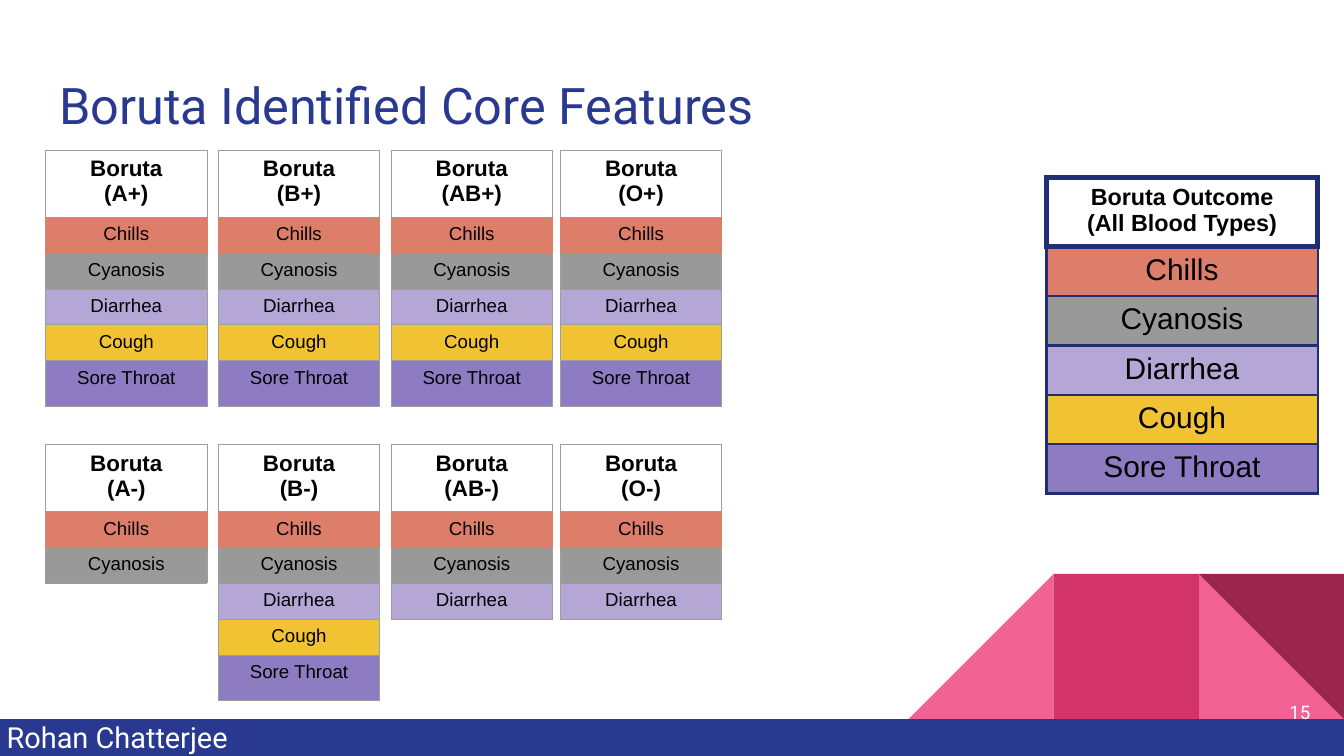
"""Build the slide of core features that Boruta identified for each blood type."""
from dataclasses import dataclass

from lxml import etree
from pptx import Presentation
from pptx import util as u
from pptx.dml.color import RGBColor
from pptx.enum import shapes, text
from pptx.oxml.ns import qn


@dataclass(frozen=True)
class Theme:
    heading: str = "Roboto"
    body: str = "Arial"
    title_size: int = 54
    author_size: int = 31
    outcome_size: int = 32
    outcome_head_size: int = 25
    head_size: int = 24
    small_size: int = 20
    blue: str = "2A3990"
    navy: str = "212D74"
    grey: str = "9E9E9E"
    pink: str = "F06292"
    rose: str = "D23369"
    wine: str = "9C254D"
    white: str = "FFFFFF"
    black: str = "000000"
    chills: str = "DD7E6B"
    cyanosis: str = "999999"
    diarrhea: str = "B4A7D6"
    cough: str = "F1C232"
    throat: str = "8E7CC3"


THEME = Theme()
FEATURES = [
    ("Chills", THEME.chills),
    ("Cyanosis", THEME.cyanosis),
    ("Diarrhea", THEME.diarrhea),
    ("Cough", THEME.cough),
    ("Sore Throat", THEME.throat),
]
BLOOD_TYPES = [
    (2.23, [("A+", 5), ("B+", 5), ("AB+", 5), ("O+", 5)]),
    (6.61, [("A-", 2), ("B-", 5), ("AB-", 3), ("O-", 3)]),
]
TABLE_LEFTS = [0.68, 3.25, 5.82, 8.34]
COLUMNS, ROWS = 20, 11.25


def write(frame, lines, *, size, font, color, bold=False, align=text.PP_ALIGN.LEFT, shift=0):
    """Fill a text frame with lines, shifting the first one sideways."""
    for index, line in enumerate(lines):
        para = frame.paragraphs[0] if index == 0 else frame.add_paragraph()
        para.alignment = align
        if shift and index == 0:
            properties = para._p.get_or_add_pPr()
            properties.set("marL", "0")
            properties.set("indent", str(u.Inches(shift)))
        span = para.add_run()
        span.text = line
        span.font.size = u.Pt(size)
        span.font.name = font
        span.font.bold = bold
        span.font.color.rgb = RGBColor.from_string(color)


def outline(cell, **sides):
    """Draw the cell borders L, R, T and B, each given as (color, points)."""
    properties = cell._tc.get_or_add_tcPr()
    for side in "LRTB":
        color, width = sides[side]
        line = etree.SubElement(properties, qn(f"a:ln{side}"), w=str(u.Pt(width)))
        fill = etree.SubElement(line, qn("a:solidFill"))
        etree.SubElement(fill, qn("a:srgbClr"), val=color)


class Canvas:
    """Hold the theme and current slide, and place elements on its grid."""

    def __init__(self, deck, theme):
        self.theme = theme
        self.page = deck.slides.add_slide(deck.slide_layouts[6])
        self.column = deck.slide_width / COLUMNS
        self.row = deck.slide_height / ROWS

    def place(self, left, top, width, height):
        """Turn grid columns and rows into slide lengths."""
        return (round(left * self.column), round(top * self.row),
                round(width * self.column), round(height * self.row))

    def block(self, kind, area, color, rotation=0, flip=False):
        """Add a plain filled shape."""
        shape = self.page.shapes.add_shape(kind, *self.place(*area))
        shape.shadow.inherit = False
        shape.fill.solid()
        shape.fill.fore_color.rgb = RGBColor.from_string(color)
        shape.line.fill.background()
        shape.rotation = rotation
        if flip:
            shape._element.spPr.find(qn("a:xfrm")).set("flipH", "1")

    def label(self, line, area, inset, anchor=text.MSO_ANCHOR.TOP, **style):
        """Add a text box with one line."""
        box = self.page.shapes.add_textbox(*self.place(*area))
        frame = box.text_frame
        frame.word_wrap = True
        frame.vertical_anchor = anchor
        frame.margin_left = frame.margin_right = u.Inches(inset)
        frame.margin_top = frame.margin_bottom = u.Inches(inset)
        write(frame, [line], font=self.theme.heading, **style)

    def features(self, head, count, left, top, width, heights, sizes, borders, shift=0):
        """Add a one-column table: a header over the first features."""
        area = self.place(left, top, width, sum(heights))
        table = self.page.shapes.add_table(count + 1, 1, *area).table
        table.first_row = table.horz_banding = False
        rows = [(head, None)] + [([name], color) for name, color in FEATURES[:count]]
        for index, (lines, color) in enumerate(rows):
            table.rows[index].height = round(heights[index] * self.row)
            cell = table.cell(index, 0)
            cell.margin_left = cell.margin_right = u.Inches(0.1)
            cell.margin_top = cell.margin_bottom = u.Inches(0.1)
            outline(cell, **borders(index))
            if color:
                cell.fill.solid()
                cell.fill.fore_color.rgb = RGBColor.from_string(color)
            else:
                cell.fill.background()
            write(cell.text_frame, lines, size=sizes[min(index, 1)], font=self.theme.body,
                  color=self.theme.black, bold=index == 0, align=text.PP_ALIGN.CENTER,
                  shift=0 if index else shift)


def small_borders(index):
    """Give grey borders, with the sides of the Chills row in its own colour."""
    grey, chills = (THEME.grey, 0.75), (THEME.chills, 0.75)
    side = chills if index == 1 else grey
    return dict(L=side, R=side, T=chills if index == 2 else grey, B=side)


def outcome_borders(index):
    """Give navy borders, thick around the header."""
    thin, thick = (THEME.navy, 3), (THEME.navy, 6)
    side = thin if index else thick
    return dict(L=side, R=side, T=thick if index < 2 else thin, B=side)


def main():
    """Build and save the deck."""
    deck = Presentation()
    deck.slide_width, deck.slide_height = u.Inches(20), u.Inches(11.25)
    canvas = Canvas(deck, THEME)

    side, top = 2.16, 8.54
    left, middle, right = (COLUMNS - side * count for count in (3, 2, 1))
    triangle, rectangle = shapes.MSO_SHAPE.RIGHT_TRIANGLE, shapes.MSO_SHAPE.RECTANGLE
    canvas.block(triangle, (right, top, side, side), THEME.pink)
    canvas.block(triangle, (left, top, side, side), THEME.pink, flip=True)
    canvas.block(rectangle, (middle, top, side, side), THEME.rose)
    canvas.block(triangle, (right, top, side, side), THEME.wine, rotation=180)
    canvas.block(rectangle, (0, top + side, COLUMNS, ROWS - top - side), THEME.blue)

    canvas.label("Boruta Identified Core Features", (0.68, 0.9, 18.64, 1.33), 0.2,
                 size=THEME.title_size, color=THEME.blue)
    canvas.label("15", (18.5, 10.17, 1.2, 0.86), 0.2, text.MSO_ANCHOR.MIDDLE,
                 size=THEME.small_size, color=THEME.white, align=text.PP_ALIGN.RIGHT)

    canvas.features(["Boruta Outcome", "(All Blood Types)"], 5, 15.57, 2.64, 4.04,
                    [0.87] + [0.73] * 5, (THEME.outcome_head_size, THEME.outcome_size),
                    outcome_borders)
    for table_top, groups in BLOOD_TYPES:
        for table_left, (blood, count) in zip(TABLE_LEFTS, groups):
            heights = ([1] + [0.5] * 4 + [0.68])[:count + 1]
            canvas.features(["Boruta", f"({blood})"], count, table_left, table_top, 2.4,
                            heights, (THEME.head_size, THEME.small_size),
                            small_borders, shift=-0.18)

    canvas.label("Rohan Chatterjee", (0, 10.61, 4.94, 0.72), 0.1,
                 size=THEME.author_size, color=THEME.white)
    deck.save("out.pptx")


if __name__ == "__main__":
    main()
